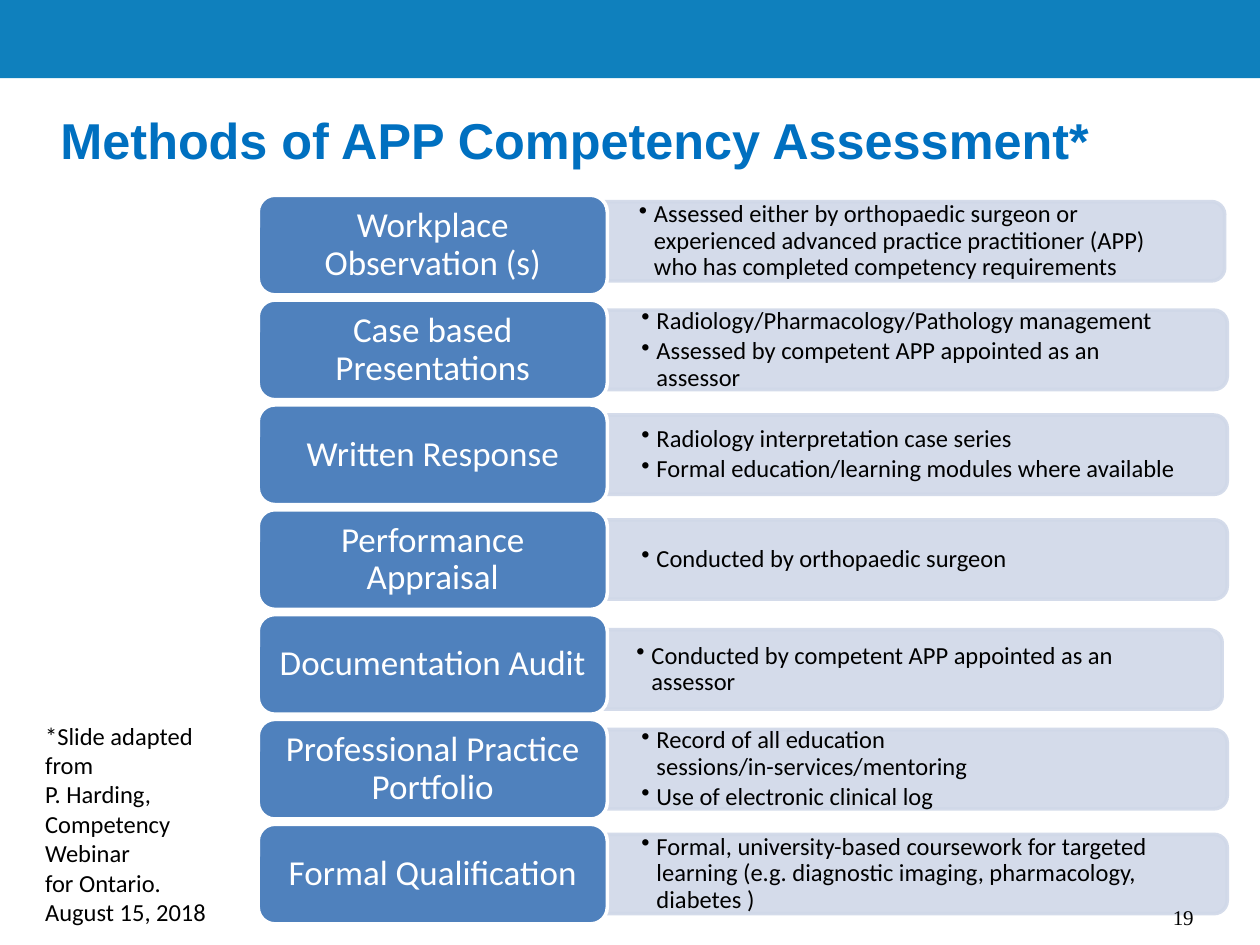
from lxml.etree import SubElement
from pptx import Presentation
from pptx.dml.color import RGBColor
from pptx.enum.shapes import MSO_SHAPE as Form
from pptx.enum.text import MSO_ANCHOR as Anchor, PP_ALIGN as Align
from pptx.oxml.ns import qn
from pptx.util import Inches, Pt

CELL = 0.1  # side of one grid cell in inches; the slide is 100 by 75 cells
FIRST, STEP = 15.5, 8.32
LEFT, WIDE, HIGH = 20.5, 27.7, 7.9
BAR_W, BAR_H = 49.2, 6.3

ROWS = [
    ("Workplace Observation (s)",
     ["Assessed either by orthopaedic surgeon or experienced advanced "
      "practice practitioner (APP) who has completed competency requirements"]),
    ("Case based Presentations",
     ["Radiology/Pharmacology/Pathology management",
      "Assessed by competent APP appointed as an assessor"]),
    ("Written Response",
     ["Radiology interpretation case series",
      "Formal education/learning modules where available"]),
    ("Performance Appraisal", ["Conducted by orthopaedic surgeon"]),
    ("Documentation Audit",
     ["Conducted by competent APP appointed as an assessor"]),
    ("Professional Practice Portfolio",
     ["Record of all education sessions/in-services/mentoring",
      "Use of electronic clinical log"]),
    ("Formal Qualification",
     ["Formal, university-based coursework for targeted learning "
      "(e.g. diagnostic imaging, pharmacology, diabetes )"]),
]
NUDGE = {0: (-0.2, -0.3), 4: (-0.4, 0.4)}  # bars set a little off the grid

NOTE = ["*Slide adapted from", "P. Harding,", "Competency Webinar",
        "for Ontario.", "August 15, 2018"]


def rgb(code):
    return RGBColor.from_string(code)


def cells(*counts):
    return [Inches(n * CELL) for n in counts]


def fade(item, share):
    """Make the fill and line see-through, keeping the given share."""
    for node in item._element.spPr.iter(qn("a:srgbClr")):
        SubElement(node, qn("a:alpha")).set("val", str(int(share * 100000)))


class Deck:
    blue, pale, white, black = "4F81BD", "D0D8E8", "FFFFFF", "000000"
    font = "Calibri"

    def __init__(self):
        self.prs = Presentation()
        self.prs.slide_width, self.prs.slide_height = cells(100, 75)
        self.slide = self.prs.slides.add_slide(self.prs.slide_layouts[5])

    def put(self, frame, lines, size, color, font=None, bold=False):
        """Add each line as a paragraph of one run."""
        for i, line in enumerate(lines):
            para = frame.paragraphs[0] if i == 0 else frame.add_paragraph()
            run = para.add_run()
            run.text = line
            run.font.name = font or self.font
            run.font.size = Pt(size)
            run.font.bold = bold
            run.font.color.rgb = rgb(color)

    def pad(self, frame, side, end):
        frame.margin_left = frame.margin_right = Inches(side)
        frame.margin_top = frame.margin_bottom = Inches(end)
        frame.vertical_anchor = Anchor.MIDDLE
        frame.word_wrap = True

    def title(self, text, box):
        head = self.slide.shapes.title
        head.left, head.top, head.width, head.height = cells(*box)
        self.pad(head.text_frame, 0.1, 0.05)
        self.put(head.text_frame, [text], 28.8, "0070C0", "Arial", True)
        head.text_frame.paragraphs[0].alignment = Align.LEFT

    def shape(self, form, box, fill, line=None):
        item = self.slide.shapes.add_shape(form, *cells(*box))
        item.shadow.inherit = False
        item.fill.solid()
        item.fill.fore_color.rgb = rgb(fill)
        if line:
            item.line.color.rgb = rgb(line)
            item.line.width = Pt(2)
        else:
            item.line.fill.background()
        return item

    def text(self, lines, box, size, font=None, wrap=True):
        frame = self.slide.shapes.add_textbox(*cells(*box)).text_frame
        frame.word_wrap = wrap
        self.put(frame, lines, size, self.black, font)
        return frame

    def bar(self, x, y):
        """Panel with its right corners rounded: a tall shape turned by 90."""
        turn = (BAR_W - BAR_H) / 2
        item = self.shape(Form.ROUND_2_SAME_RECTANGLE,
                          (x + turn, y - turn, BAR_H, BAR_W),
                          self.pale, self.pale)
        item.rotation = 90
        fade(item, 0.9)

    def bullets(self, lines, box):
        frame = self.text(lines, box, 14)
        self.pad(frame, 0.27, 0.14)
        for para in frame.paragraphs:
            para.line_spacing = 0.9
            para.space_after = Pt(2.1)
            props = para._p.get_or_add_pPr()
            props.set("marL", str(Inches(0.12)))
            props.set("indent", str(-Inches(0.12)))
            SubElement(props, qn("a:buChar")).set("char", "•")

    def label(self, text, box):
        frame = self.shape(Form.ROUNDED_RECTANGLE, box,
                           self.blue, self.white).text_frame
        self.pad(frame, 0.12, 0.08)
        self.put(frame, [text], 20, self.white)
        para = frame.paragraphs[0]
        para.alignment = Align.CENTER
        para.line_spacing = 0.9
        para.space_after = Pt(7)

    def row(self, i, name, points):
        top = FIRST + i * STEP
        dx, dy = NUDGE.get(i, (0, 0))
        x, y = LEFT + WIDE + dx, top + (HIGH - BAR_H) / 2 + dy
        self.bar(x, y)
        self.bullets(points, (x, y + 0.3, BAR_W - 0.3, BAR_H - 0.6))
        self.label(name, (LEFT, top, WIDE, HIGH))


def main():
    deck = Deck()
    deck.shape(Form.RECTANGLE, (0, 0, 100, 6.2), "0F80BD")
    deck.title("Methods of APP Competency Assessment*", (3.8, 6.7, 90.2, 8.7))
    for i, (name, points) in enumerate(ROWS):
        deck.row(i, name, points)
    deck.text(NOTE, (2.6, 56.7, 16.7, 17.5), 14)
    deck.text(["19"], (92.1, 71.3, 3.7, 3), 12, "Times New Roman", False)
    deck.prs.save("out.pptx")


if __name__ == "__main__":
    main()
